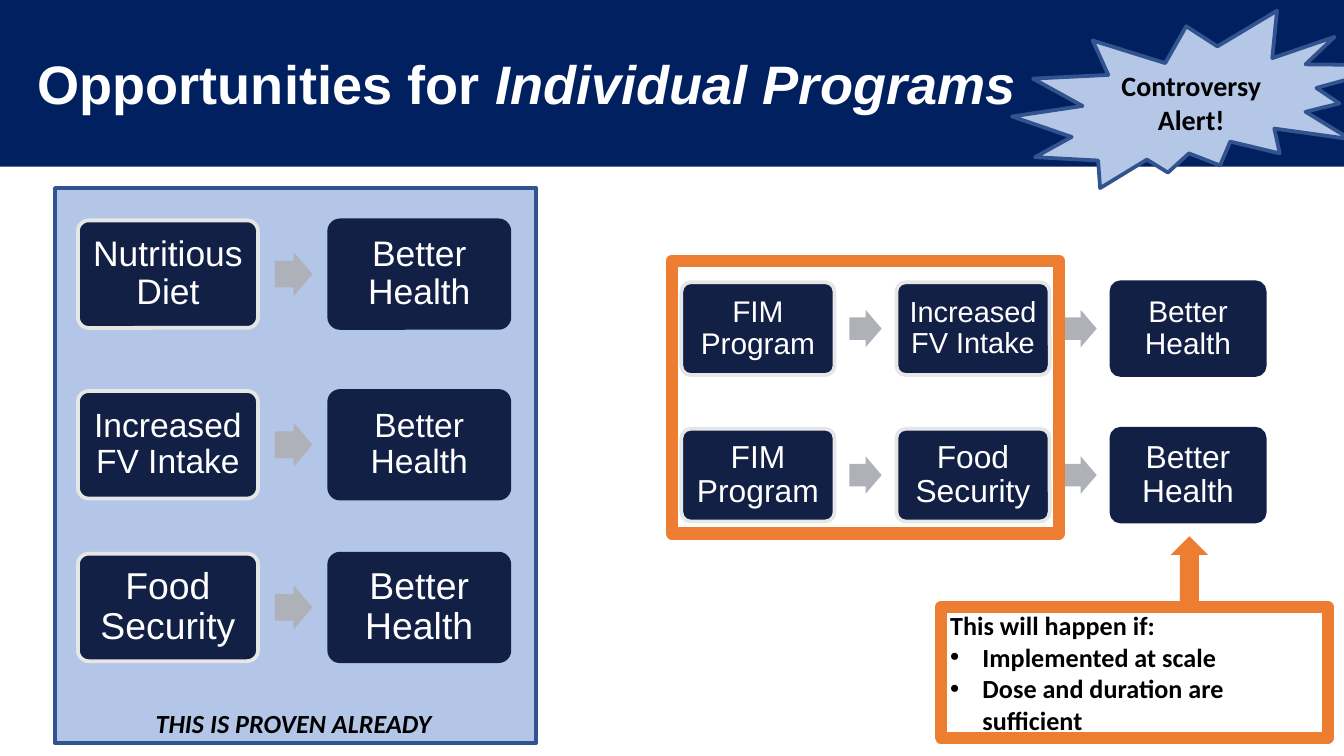
"""Build the slide on opportunities for individual programs."""
from lxml import etree
from pptx import Presentation
from pptx import util as u
from pptx.dml import color
from pptx.enum import shapes, text
from pptx.oxml import ns

COLORS = {
    "band": "002060", "panel": "B3C6E7", "burst": "B4C7E7", "outline": "31538F",
    "card": "132046", "edge": "E7E6E6", "arrow": "AEB2B8", "accent": "ED7D31",
    "white": "FFFFFF", "black": "000000",
}
TITLE = [("Opportunities for ", {}), ("Individual Programs", {"italic": True})]
FLOWS = [
    {"left": 0.58, "card": (1.34, 0.8), "pitch": 1.87, "arrow": (0.28, 0.33), "rows": [
        (1.64, 0.08, [("Nutritious Diet", 19), ("Better Health", 19)]),
        (2.91, 0.07, [("Increased FV Intake", 18), ("Better Health", 18)]),
        (4.12, 0.08, [("Food Security", 20), ("Better Health", 20)]),
    ]},
    {"left": 5.07, "card": (1.14, 0.69), "pitch": 1.6, "arrow": (0.24, 0.28), "rows": [
        (2.1, 0.07, [("FIM Program", 16), ("Increased FV Intake", 15.5), ("Better Health", 16)]),
        (3.19, 0.07, [("FIM Program", 17), ("Food Security", 17), ("Better Health", 17)]),
    ]},
]
PROVEN = "THIS IS PROVEN ALREADY"
ALERT = "Controversy Alert!"
CONDITION = "This will happen if:"
CONDITIONS = ["Implemented at scale", "Dose and duration are sufficient"]

SLIDE_WIDTH = 10
SLIDE_HEIGHT = SLIDE_WIDTH * 9 / 16
SHAPE = shapes.MSO_SHAPE
CENTER = text.PP_ALIGN.CENTER
LEFT = text.PP_ALIGN.LEFT


def rgb(name):
    return color.RGBColor.from_string(COLORS[name])


def add_shape(page, kind, area, fill=None, line=None, weight=2, adjust=()):
    shape = page.shapes.add_shape(kind, *map(u.Inches, area))
    shape.shadow.inherit = False
    for index, value in enumerate(adjust):
        shape.adjustments[index] = value
    if fill:
        shape.fill.solid()
        shape.fill.fore_color.rgb = rgb(fill)
    else:
        shape.fill.background()
    if line:
        shape.line.color.rgb = rgb(line)
        shape.line.width = u.Pt(weight)
    else:
        shape.line.fill.background()
    return shape


def set_frame(box, across=0.07, down=0.04, anchor=text.MSO_ANCHOR.MIDDLE):
    frame = box.text_frame
    frame.word_wrap = True
    frame.vertical_anchor = anchor
    frame.margin_left = frame.margin_right = u.Inches(across)
    frame.margin_top = frame.margin_bottom = u.Inches(down)
    return frame


def write(para, runs, size, font, ink, align=LEFT, spacing=None, bold=False):
    para.alignment = align
    if spacing:
        para.line_spacing = spacing
    for words, style in runs:
        span = para.add_run()
        span.text = words
        span.font.name = font
        span.font.size = u.Pt(size)
        span.font.bold = bold
        span.font.italic = style.get("italic", False)
        span.font.color.rgb = rgb(ink)


def add_bullet(para, indent=0.24):
    properties = para._p.get_or_add_pPr()
    properties.set("marL", str(u.Inches(indent)))
    properties.set("indent", str(u.Inches(-indent)))
    etree.SubElement(properties, ns.qn("a:buFont"), typeface="Arial")
    etree.SubElement(properties, ns.qn("a:buChar"), char="•")


def add_flow(page, flow):
    width, height = flow["card"]
    arrow_width, arrow_height = flow["arrow"]
    arrow_gap = (flow["pitch"] - width - arrow_width) / 2
    for top, inset, steps in flow["rows"]:
        for index, (words, size) in enumerate(steps):
            left = flow["left"] + index * flow["pitch"]
            last = index == len(steps) - 1
            card = add_shape(page, SHAPE.ROUNDED_RECTANGLE, (left, top, width, height),
                             "card", "card" if last else "edge", adjust=[0.1])
            write(set_frame(card, inset, inset).paragraphs[0], [(words, {})],
                  size, "Arial", "white", CENTER, 0.9)
            if not last:
                add_shape(page, SHAPE.RIGHT_ARROW,
                          (left + width + arrow_gap, top + (height - arrow_height) / 2,
                           arrow_width, arrow_height), "arrow", adjust=[0.6, 0.5])


def main():
    deck = Presentation()
    deck.slide_width, deck.slide_height = u.Inches(SLIDE_WIDTH), u.Inches(SLIDE_HEIGHT)
    page = deck.slides.add_slide(deck.slide_layouts[6])

    add_shape(page, SHAPE.RECTANGLE, (0.41, 1.4, 3.58, 4.13), "panel", "outline")
    add_shape(page, SHAPE.RECTANGLE, (0, 0, SLIDE_WIDTH, 1.24), "band")
    title = page.shapes.add_textbox(*map(u.Inches, (0.21, 0.1, 8.62, 1.09)))
    write(set_frame(title).paragraphs[0], TITLE, 29, "Arial", "white", spacing=0.9, bold=True)

    for flow in FLOWS:
        add_flow(page, flow)

    proven = page.shapes.add_textbox(*map(u.Inches, (0.58, 5.22, 3.21, 0.3)))
    write(set_frame(proven, anchor=text.MSO_ANCHOR.TOP).paragraphs[0],
          [(PROVEN, {"italic": True})], 14, "Calibri", "black", CENTER, bold=True)

    burst = add_shape(page, SHAPE.EXPLOSION2, (7.53, 0.08, 2.88, 1.32), "burst", "outline")
    write(set_frame(burst).paragraphs[0], [(ALERT, {})], 15, "Calibri", "black", CENTER, bold=True)

    add_shape(page, SHAPE.RECTANGLE, (5, 1.94, 2.88, 2.03), line="accent", weight=6.5)
    note = add_shape(page, SHAPE.RECTANGLE, (7, 4.52, 2.88, 0.97), line="accent", weight=6.5)
    frame = set_frame(note)
    write(frame.paragraphs[0], [(CONDITION, {})], 14, "Calibri", "black", bold=True)
    for condition in CONDITIONS:
        para = frame.add_paragraph()
        write(para, [(condition, {})], 14, "Calibri", "black", bold=True)
        add_bullet(para)
    add_shape(page, SHAPE.UP_ARROW, (8.71, 3.99, 0.28, 0.56), "accent", adjust=[0.5, 0.5])

    deck.save("out.pptx")


if __name__ == "__main__":
    main()
